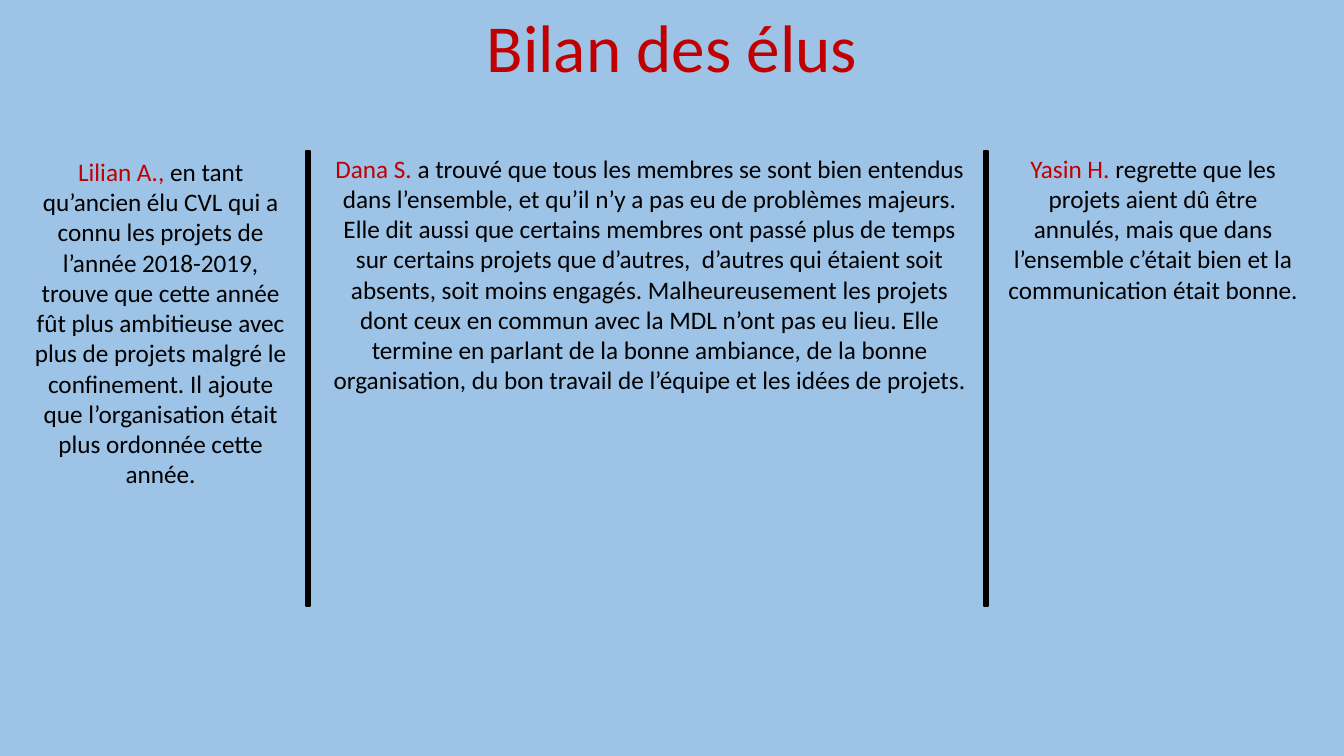
from pptx import Presentation
from pptx.dml.color import RGBColor
from pptx.enum.shapes import MSO_SHAPE
from pptx.enum.text import MSO_ANCHOR, MSO_AUTO_SIZE, PP_ALIGN
from pptx.util import Cm, Pt

TITLE = "Bilan des élus"
# name, opinion, (left, top, width, height) in cm
REVIEWS = [
    ("Lilian A.,",
     " en tant qu’ancien élu CVL qui a connu les projets de l’année 2018-2019, "
     "trouve que cette année fût plus ambitieuse avec plus de projets malgré le "
     "confinement. Il ajoute que l’organisation était plus ordonnée cette année.",
     (0.43, 3.81, 7.24, 8.64)),
    ("Dana S. ",
     "a trouvé que tous les membres se sont bien entendus dans l’ensemble, et "
     "qu’il n’y a pas eu de problèmes majeurs. Elle dit aussi que certains membres "
     "ont passé plus de temps sur certains projets que d’autres,  d’autres qui "
     "étaient soit absents, soit moins engagés. Malheureusement les projets dont "
     "ceux en commun avec la MDL n’ont pas eu lieu. Elle termine en parlant de la "
     "bonne ambiance, de la bonne organisation, du bon travail de l’équipe et les "
     "idées de projets.",
     (7.98, 3.73, 16.79, 6.4)),
    ("Yasin H. ",
     "regrette que les projets aient dû être annulés, mais que dans l’ensemble "
     "c’était bien et la communication était bonne.",
     (25.1, 3.73, 7.92, 4.11)),
]
DIVIDER_LEFTS = (7.72, 24.79)
DIVIDER_TOP, DIVIDER_WIDTH, DIVIDER_HEIGHT = 3.81, 0.1, 11.46
SKY, RED, BLACK = "9DC3E6", "C00000", "000000"
FONT = "Calibri"


def paint(target, color):
    """Give a font, or a solid fill, its colour."""
    if hasattr(target, "solid"):
        target.solid()
        target.fore_color.rgb = RGBColor.from_string(color)
    else:
        target.color.rgb = RGBColor.from_string(color)


def place(shape, left, top, width, height):
    shape.left, shape.top = Cm(left), Cm(top)
    shape.width, shape.height = Cm(width), Cm(height)


def format_paragraph(paragraph, size):
    paragraph.alignment = PP_ALIGN.CENTER
    paragraph.font.name = FONT
    paragraph.font.size = Pt(size)


prs = Presentation()
prs.slide_width, prs.slide_height = Cm(33.87), Cm(19.05)
slide = prs.slides.add_slide(prs.slide_layouts[5])
paint(slide.background.fill, SKY)

# Title across the full width
title = slide.shapes.title
place(title, 0, 0, 33.87, 2.31)
title.text_frame.text = TITLE
title.text_frame.vertical_anchor = MSO_ANCHOR.TOP
title.text_frame.auto_size = MSO_AUTO_SIZE.NONE
heading = title.text_frame.paragraphs[0]
format_paragraph(heading, 48)
paint(heading.font, RED)

# One column per elected member
for name, opinion, box in REVIEWS:
    review = slide.shapes.add_textbox(*map(Cm, box)).text_frame
    review.word_wrap = True
    review.auto_size = MSO_AUTO_SIZE.SHAPE_TO_FIT_TEXT
    paragraph = review.paragraphs[0]
    format_paragraph(paragraph, 18)
    for words, color in ((name, RED), (opinion, BLACK)):
        run = paragraph.add_run()
        run.text = words
        paint(run.font, color)

# Vertical bars between the columns
for left in DIVIDER_LEFTS:
    divider = slide.shapes.add_shape(
        MSO_SHAPE.RECTANGLE, Cm(left), Cm(DIVIDER_TOP),
        Cm(DIVIDER_WIDTH), Cm(DIVIDER_HEIGHT))
    divider.shadow.inherit = False
    paint(divider.fill, BLACK)
    paint(divider.line.fill, BLACK)
    divider.line.width = Pt(1.5)

prs.save("out.pptx")
